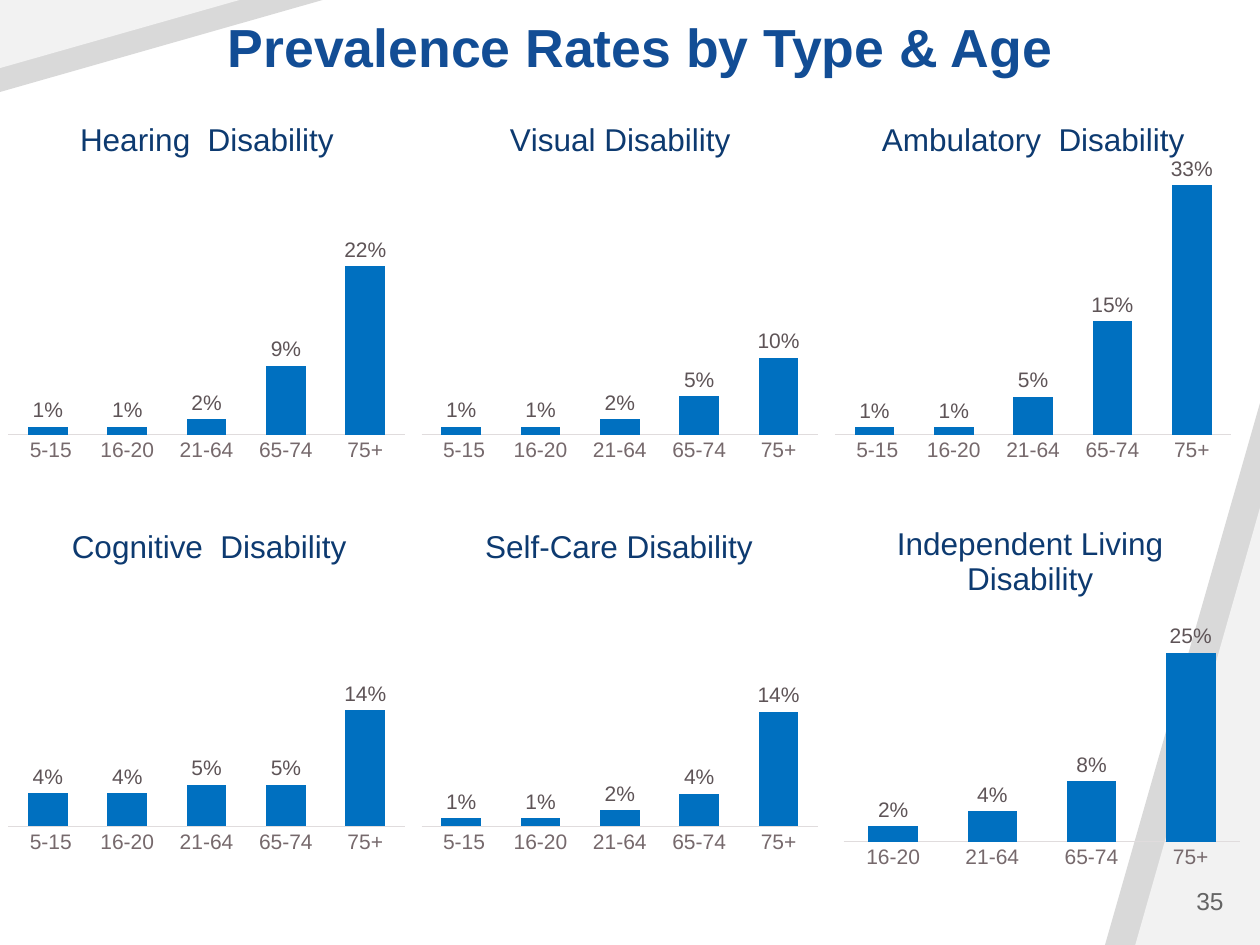
"""Build a slide of six small column charts of disability rates by type and age."""
import pptx
import pptx.chart.data
import pptx.dml.color
import pptx.enum.chart
import pptx.enum.shapes
import pptx.enum.text
import pptx.oxml
import pptx.oxml.ns
import pptx.util

HUES = {
    "title": "124D95", "head": "0D3A70", "bar": "0070C0", "label": "5E5457",
    "axis": "76696C", "line": "E0DCDD", "text": "242021", "page": "646464",
    "band": "D9D9D9", "pale": "F2F2F2",
}
FONTS = {
    "title": {"size": 30.6, "bold": True},
    "page": {"size": 14, "bold": False},
    "head": {"size": 18, "bold": False},
    "axis": {"size": 12, "bold": False},
    "label": {"size": 12, "bold": False},
    "text": {"size": 10, "bold": False},
}
AGES = [" 5-15", "16-20", "21-64", "65-74", "75+"]
WIDE, HIGH = 32.8, 30
ROWS = (7.2, 39.5)
CHARTS = [
    (0, 0, "Hearing  Disability", [0.01, 0.01, 0.02, 0.09, 0.22], 0.35, 0.18, 0.91, 0.71),
    (WIDE, 0, "Visual Disability", [0.01, 0.01, 0.02, 0.05, 0.10], 0.35, 0.22, 0.91, 0.71),
    (2 * WIDE, 0, "Ambulatory  Disability", [0.01, 0.01, 0.05, 0.15, 0.33], 0.35, 0.12, 0.91, 0.70),
    (0, 1, "Cognitive  Disability", [0.04, 0.04, 0.05, 0.05, 0.14], 0.30, 0.16, 0.87, 0.66),
    (WIDE, 1, "Self-Care Disability", [0.01, 0.01, 0.02, 0.04, 0.14], 0.30, 0.16, 0.87, 0.65),
    (66.3, 1, "Independent Living\nDisability", [0.02, 0.04, 0.08, 0.25], 0.30, 0.14, 0.91, 0.60),
]


class Deck:
    """Hold the style and the current slide, on a grid of 100 columns by 75 rows."""

    def __init__(self):
        self.prs = pptx.Presentation()
        self.prs.slide_width = pptx.util.Inches(10)
        self.prs.slide_height = pptx.util.Inches(7.5)
        self.slide = self.prs.slides.add_slide(self.prs.slide_layouts[6])

    def grid(self, *cells):
        """Turn grid cells into lengths."""
        return [pptx.util.Inches(cell / 10) for cell in cells]

    def hue(self, name):
        """Return a named colour."""
        return pptx.dml.color.RGBColor.from_string(HUES[name])

    def style(self, font, name):
        """Give a font its named format."""
        look = FONTS[name]
        vals = {"name": "Arial", "size": pptx.util.Pt(look["size"]), "bold": look["bold"]}
        for key, val in vals.items():
            setattr(font, key, val)
        font.color.rgb = self.hue(name)

    def wedge(self, box, fill, turn=0):
        """Add a corner triangle."""
        kind = pptx.enum.shapes.MSO_SHAPE.ISOSCELES_TRIANGLE
        shape = self.slide.shapes.add_shape(kind, *self.grid(*box))
        shape.adjustments[0] = 1
        shape.rotation = turn
        shape.shadow.inherit = False
        shape.fill.solid()
        shape.fill.fore_color.rgb = self.hue(fill)
        shape.line.fill.background()

    def text(self, box, words, name, align):
        """Add a line of text."""
        frame = self.slide.shapes.add_textbox(*self.grid(*box)).text_frame
        frame.word_wrap = True
        frame.vertical_anchor = pptx.enum.text.MSO_ANCHOR.MIDDLE
        frame.text = words
        para = frame.paragraphs[0]
        para.alignment = align
        self.style(para.runs[0].font, name)

    def place(self, host, spot, inner=False, **parts):
        """Set the manual layout of a chart part."""
        for old in host.findall(pptx.oxml.ns.qn("c:layout")):
            host.remove(old)
        body = '<c:layoutTarget val="inner"/>' if inner else ""
        body += "".join(f'<c:{key}Mode val="edge"/>' for key in "xy")
        body += "".join(f'<c:{key} val="{val:.2f}"/>' for key, val in parts.items())
        space = pptx.oxml.ns.nsdecls("c")
        host.insert(spot, pptx.oxml.parse_xml(
            f"<c:layout {space}><c:manualLayout>{body}</c:manualLayout></c:layout>"))

    def clear(self):
        """Return shape properties with no fill and no line."""
        space = pptx.oxml.ns.nsdecls("c", "a")
        return pptx.oxml.parse_xml(
            f"<c:spPr {space}><a:noFill/><a:ln><a:noFill/></a:ln></c:spPr>")

    def chart(self, box, head, rates, top, left, base, tall):
        """Add a column chart of rates by age."""
        enum = pptx.enum.chart
        data = pptx.chart.data.CategoryChartData(number_format="0%")
        data.categories = AGES[-len(rates):]
        data.add_series("Series 1", rates)
        kind = enum.XL_CHART_TYPE.COLUMN_CLUSTERED
        chart = self.slide.shapes.add_chart(kind, *self.grid(*box), data).chart
        self.style(chart.font, "text")
        chart.has_legend = False
        chart.has_title = True
        frame = chart.chart_title.text_frame
        frame.text = head
        for para in frame.paragraphs:
            para.alignment = pptx.enum.text.PP_ALIGN.CENTER
            self.style(para.runs[0].font, "head")

        plot = chart.plots[0]
        looks = {"gap_width": 100, "overlap": -27, "vary_by_categories": False,
                 "has_data_labels": True}
        for key, val in looks.items():
            setattr(plot, key, val)
        tags = plot.data_labels
        marks = {"show_value": True, "number_format": "0%", "number_format_is_linked": False,
                 "position": enum.XL_LABEL_POSITION.OUTSIDE_END}
        for key, val in marks.items():
            setattr(tags, key, val)
        self.style(tags.font, "label")
        fill = plot.series[0].format.fill
        fill.solid()
        fill.fore_color.rgb = self.hue("bar")

        ages, scale = chart.category_axis, chart.value_axis
        ages.major_tick_mark = enum.XL_TICK_MARK.NONE
        self.style(ages.tick_labels.font, "axis")
        ages.format.line.color.rgb = self.hue("line")
        ages.format.line.width = pptx.util.Pt(0.75)
        limits = {"minimum_scale": 0, "maximum_scale": top,
                  "has_major_gridlines": False, "visible": False}
        for key, val in limits.items():
            setattr(scale, key, val)

        root = chart._chartSpace
        area = root.chart.plotArea
        self.place(chart.chart_title._element, 1, x=left, y=0.06)
        self.place(area, 0, inner=True, x=0.02, y=base - tall, w=0.96, h=tall)
        area.append(self.clear())
        root.chart.addnext(self.clear())


def main():
    """Draw the slide and save it."""
    deck = Deck()
    align = pptx.enum.text.PP_ALIGN
    deck.wedge((87.7, 32, 12.3, 43), "band")
    deck.wedge((90.1, 40.3, 9.9, 34.7), "pale")
    deck.wedge((0, 0, 25.6, 7.3), "band", 180)
    deck.wedge((0, 0, 19, 5.4), "pale", 180)
    deck.text((7.3, 1.1, 87, 5.1), "Prevalence Rates by Type & Age", "title", align.CENTER)
    deck.text((84.1, 69.5, 14, 4), "35", "page", align.RIGHT)
    for left, row, *rest in CHARTS:
        deck.chart((left, ROWS[row], WIDE, HIGH), *rest)
    deck.prs.save("out.pptx")


if __name__ == "__main__":
    main()
